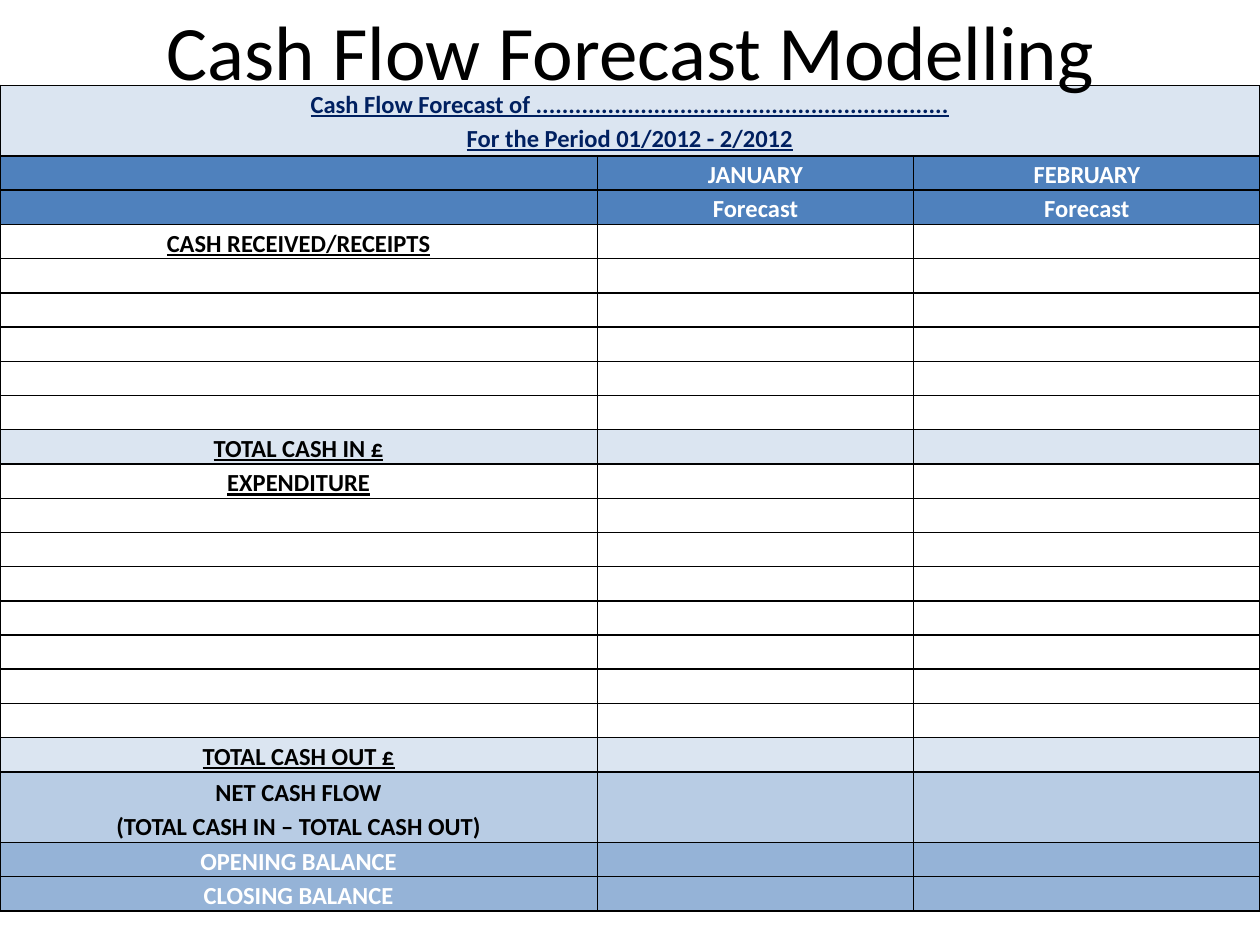
from dataclasses import dataclass

from lxml.etree import SubElement
from pptx import Presentation
from pptx.dml.color import RGBColor
from pptx.enum.text import MSO_ANCHOR, PP_ALIGN
from pptx.oxml.ns import qn
from pptx.util import Cm, Pt


@dataclass(frozen=True)
class Theme:
    font: str = "Calibri"
    title_size: int = 44
    body_size: int = 14
    black: str = "000000"
    white: str = "FFFFFF"
    navy: str = "002060"
    header: str = "4F81BD"
    total: str = "DBE5F1"
    net: str = "B8CCE4"
    balance: str = "95B3D7"


theme = Theme()


def write(frame, text, size=theme.body_size, color=theme.black, bold=False,
          underline=False, spacing=None, anchor=MSO_ANCHOR.MIDDLE):
    """Fill a text frame, one paragraph per line; empty lines keep the size."""
    frame.text = text
    frame.word_wrap = True
    frame.vertical_anchor = anchor
    for paragraph in frame.paragraphs:
        paragraph.alignment = PP_ALIGN.CENTER
        if spacing:
            paragraph.line_spacing = spacing
        for run in paragraph.runs:
            run.font.name = theme.font
            run.font.size = Pt(size)
            run.font.bold = bold
            run.font.underline = underline
            run.font.color.rgb = RGBColor.from_string(color)
        if not paragraph.runs:
            SubElement(paragraph._p, qn("a:endParaRPr"), sz=str(size * 100))


def draw_borders(cell, color=theme.black, width=Pt(1)):
    properties = cell._tc.get_or_add_tcPr()
    for side in ("a:lnL", "a:lnR", "a:lnT", "a:lnB"):
        line = SubElement(properties, qn(side), w=str(width))
        SubElement(SubElement(line, qn("a:solidFill")), qn("a:srgbClr"), val=color)


presentation = Presentation()
presentation.slide_width, presentation.slide_height = Cm(25.4), Cm(19.05)
slide = presentation.slides.add_slide(presentation.slide_layouts[5])

# Each row: cell texts, fill, text colour, underline
blank = ([""], None, theme.black, False)
forecast_rows = [
    (["Cash Flow Forecast of " + "." * 63 + "\nFor the Period 01/2012 - 2/2012"],
     theme.total, theme.navy, True),
    (["", "JANUARY", "FEBRUARY"], theme.header, theme.white, False),
    (["", "Forecast", "Forecast"], theme.header, theme.white, False),
    (["CASH RECEIVED/RECEIPTS"], None, theme.black, True),
    *[blank] * 5,
    (["TOTAL CASH IN £"], theme.total, theme.black, True),
    (["EXPENDITURE"], None, theme.black, True),
    *[blank] * 7,
    (["TOTAL CASH OUT £"], theme.total, theme.black, True),
    (["NET CASH FLOW\n(TOTAL CASH IN – TOTAL CASH OUT)"],
     theme.net, theme.black, False),
    (["OPENING BALANCE"], theme.balance, theme.white, False),
    (["CLOSING BALANCE"], theme.balance, theme.white, False),
]
column_widths = [12.04, 6.38, 6.98]
single_height, double_height = Cm(0.69), Cm(1.42)

forecast = slide.shapes.add_table(
    len(forecast_rows), len(column_widths),
    Cm(0), Cm(1.72), Cm(25.4), Cm(16.54)).table
for column, width in zip(forecast.columns, column_widths):
    column.width = Cm(width)

for row, (texts, fill, color, underline) in zip(forecast.rows, forecast_rows):
    row.height = double_height if "\n" in texts[0] else single_height
    padded_texts = texts + [""] * (len(column_widths) - len(texts))
    for cell, text in zip(row.cells, padded_texts):
        cell.margin_left = cell.margin_right = Cm(0.15)
        cell.margin_top = cell.margin_bottom = 0
        write(cell.text_frame, text, color=color, bold=True,
              underline=underline, spacing=1.15, anchor=None)
        cell.vertical_anchor = MSO_ANCHOR.BOTTOM
        draw_borders(cell)
        if fill:
            cell.fill.solid()
            cell.fill.fore_color.rgb = RGBColor.from_string(fill)
        else:
            cell.fill.background()

period_heading = forecast.cell(0, 0)
period_heading.merge(forecast.cell(0, len(column_widths) - 1))
period_heading.vertical_anchor = MSO_ANCHOR.TOP

title = slide.shapes.title
title.left, title.top, title.width, title.height = Cm(2.34), Cm(-0.58), Cm(20.75), Cm(3.18)
write(title.text_frame, "Cash Flow Forecast Modelling", size=theme.title_size)
# The title overlaps the table, so it goes to the front
title.element.getparent().append(title.element)

presentation.save("out.pptx")
